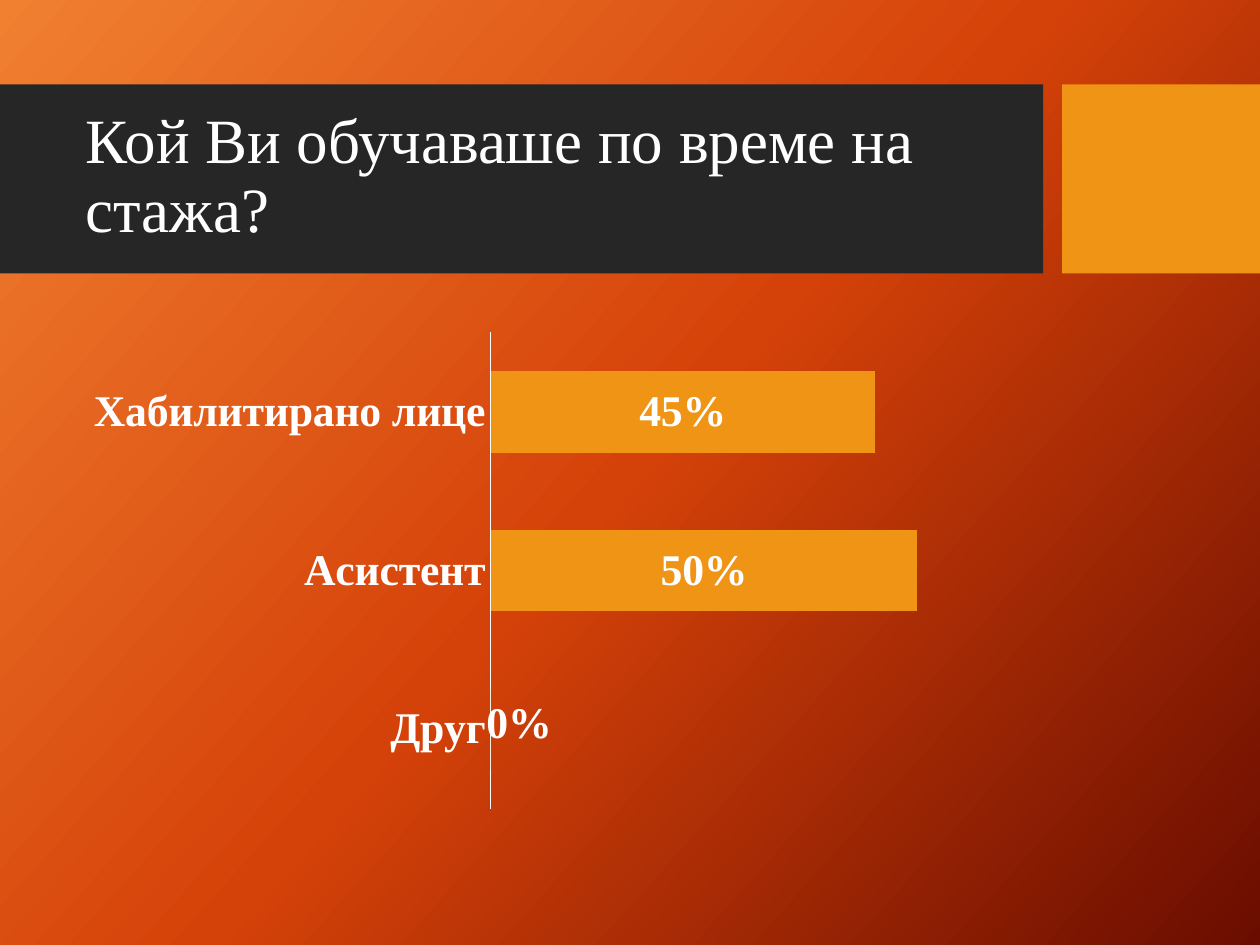
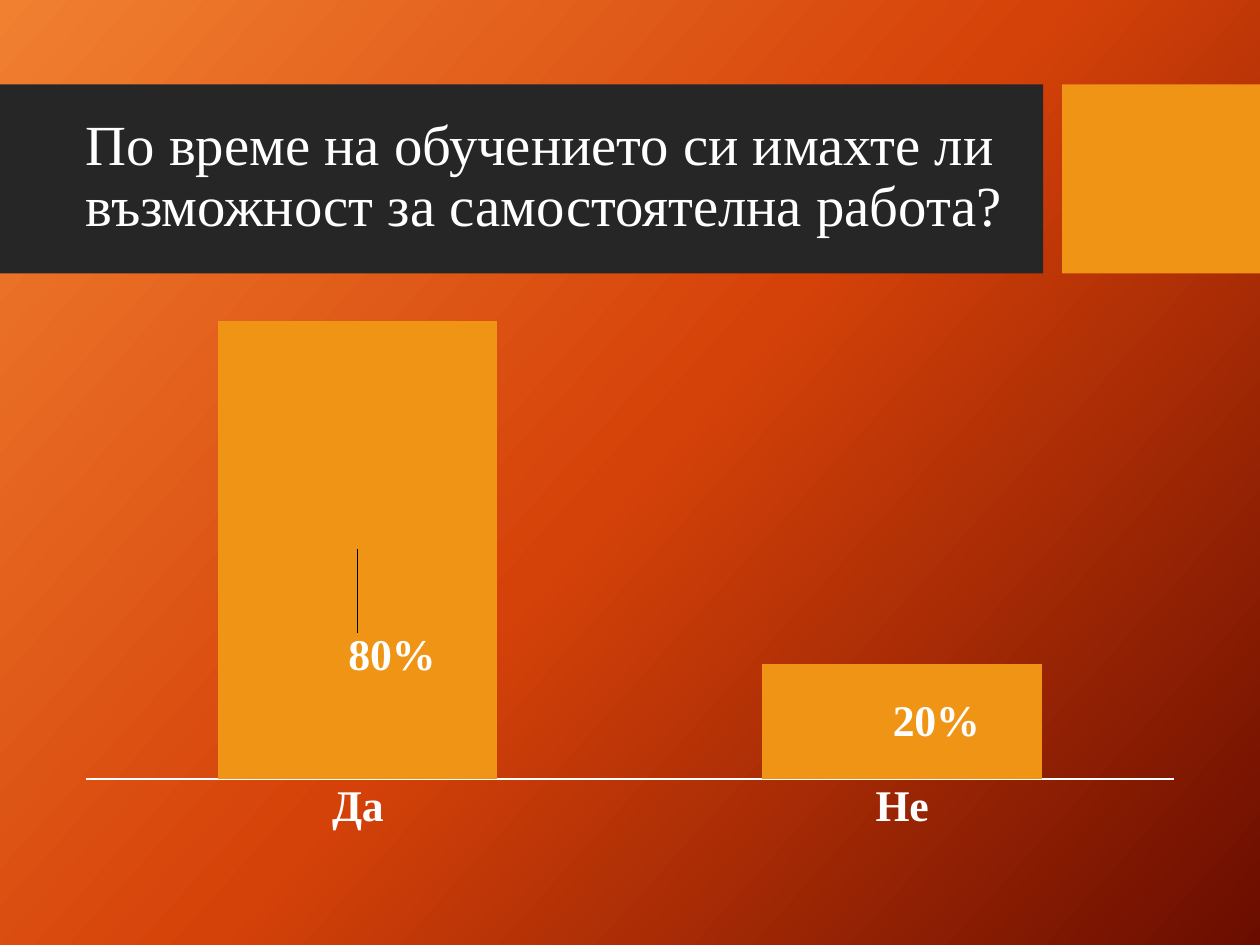
"""Build two survey slides, each with a banded title and one chart."""
from copy import deepcopy

from pptx import Presentation, util as u
from pptx.chart.data import CategoryChartData
from pptx.dml.color import RGBColor
from pptx.enum import chart as ch, shapes, text
from pptx.oxml import parse_xml
from pptx.oxml.ns import nsdecls, qn

WHITE, DARK, ORANGE = "FFFFFF", "262626", "F09415"
GRADIENT = [(0, "F18031"), (0.5, "D54209"), (1, "6A0D00")]
SERIF = "Times New Roman"
BANDS = [((0, 6.7, 82.8, 15), DARK), ((84.3, 6.7, 15.7, 15), ORANGE)]
TITLE_BOX = (5.8, 8.2, 75.4, 11.8)
SLIDES = [
    dict(title="Кой Ви обучаваше по време на стажа?", size=36,
         kind=ch.XL_CHART_TYPE.BAR_STACKED, box=(5.8, 25.6, 75.3, 39.4),
         values={"Друг": 0, "Асистент": 0.5, "Хабилитирано лице": 0.45},
         top=0.6, plot=(0.44, 0.02, 0.54, 0.96), shifts=[(0.03, -0.01)]),
    dict(title="По време на обучението си имахте ли възможност "
               "за самостоятелна работа?", size=32.4,
         kind=ch.XL_CHART_TYPE.COLUMN_STACKED, box=(5, 20, 90, 47),
         values={"Да": 0.8, "Не": 0.2},
         top=0.9, plot=(0.02, 0.02, 0.96, 0.87), shifts=[(0.03, 0.18), (0.03, 0)]),
]

prs = Presentation()
prs.slide_width, prs.slide_height = u.Inches(10), u.Inches(7.5)
COL, ROW = prs.slide_width / 100, prs.slide_height / 75


def rgb(value):
    return RGBColor.from_string(value)


def place(box):
    return [int(n * unit) for n, unit in zip(box, (COL, ROW, COL, ROW))]


fill = prs.slide_master.background.fill
fill.gradient()
fill.gradient_angle = 360 - 42
stops = fill.gradient_stops
first = fill._fill._gradFill.gsLst[0]
first.addnext(deepcopy(first))
for stop, (position, colour) in zip(fill.gradient_stops, GRADIENT):
    stop.position = position
    stop.color.rgb = rgb(colour)

for item in SLIDES:
    s = prs.slides.add_slide(prs.slide_layouts[5])
    for box, colour in BANDS:
        sp = s.shapes.add_shape(shapes.MSO_SHAPE.RECTANGLE, *place(box))
        sp.shadow.inherit = False
        sp.fill.solid()
        sp.fill.fore_color.rgb = rgb(colour)
        sp.line.fill.background()

    title = s.shapes.title
    s.shapes._spTree.append(title._element)
    for name, value in zip(("left", "top", "width", "height"), place(TITLE_BOX)):
        setattr(title, name, value)
    tf = title.text_frame
    tf.text = item["title"]
    for name, value in dict(word_wrap=True, auto_size=text.MSO_AUTO_SIZE.NONE,
                            vertical_anchor=text.MSO_ANCHOR.MIDDLE).items():
        setattr(tf, name, value)
    p = tf.paragraphs[0]
    p.alignment, p.line_spacing = text.PP_ALIGN.LEFT, 0.9
    r = p.runs[0]
    r.font.name, r.font.size = SERIF, u.Pt(item["size"])
    r.font.color.rgb = rgb(WHITE)

    data = CategoryChartData(number_format="0%")
    data.categories = list(item["values"])
    data.add_series("Series 1", list(item["values"].values()))
    chart = s.shapes.add_chart(item["kind"], *place(item["box"]), data).chart
    chart.has_legend = chart.has_title = False
    chart.font.name, chart.font.size = "Cabin", u.Pt(18)
    chart.font.color.rgb = rgb(WHITE)

    plot = chart.plots[0]
    plot.gap_width, plot.overlap, plot.vary_by_categories = 95, 100, False
    series = plot.series[0]
    series.format.fill.solid()
    series.format.fill.fore_color.rgb = rgb(ORANGE)
    labels = series.data_labels
    for name, value in dict(show_value=True, number_format="0%",
                            number_format_is_linked=False).items():
        setattr(labels, name, value)

    cat, val = chart.category_axis, chart.value_axis
    cat.major_tick_mark = cat.minor_tick_mark = ch.XL_TICK_MARK.NONE
    cat.format.line.color.rgb = rgb(WHITE)
    cat.format.line.width = u.Pt(1)
    val.visible = val.has_major_gridlines = False
    val.minimum_scale, val.maximum_scale = 0, item["top"]
    for font in (labels.font, cat.tick_labels.font):
        font.name, font.size, font.bold = SERIF, u.Pt(25), True
        font.color.rgb = rgb(WHITE)

    area = chart._chartSpace.chart.plotArea
    for old in area.findall(qn("c:layout")):
        area.remove(old)
    sides = "".join(f'<c:{k} val="{v}"/>' for k, v in zip("xywh", item["plot"]))
    area.insert(0, parse_xml(
        f'<c:layout {nsdecls("c")}><c:manualLayout><c:layoutTarget val="inner"/>'
        f'<c:xMode val="edge"/><c:yMode val="edge"/>{sides}'
        '</c:manualLayout></c:layout>'))

    shows = "".join(f'<c:show{k} val="{int(k == "Val")}"/>' for k in
                    ("LegendKey", "Val", "CatName", "SerName", "Percent", "BubbleSize"))
    for i, (x, y) in enumerate(item["shifts"]):
        label = parse_xml(
            f'<c:dLbl {nsdecls("c")}><c:idx val="{i}"/><c:layout><c:manualLayout>'
            f'<c:x val="{x}"/><c:y val="{y}"/></c:manualLayout></c:layout>'
            f'<c:numFmt formatCode="0%" sourceLinked="0"/>{shows}</c:dLbl>')
        label.insert(3, deepcopy(labels._element.find(qn("c:txPr"))))
        labels._element.insert(i, label)

prs.save("out.pptx")
